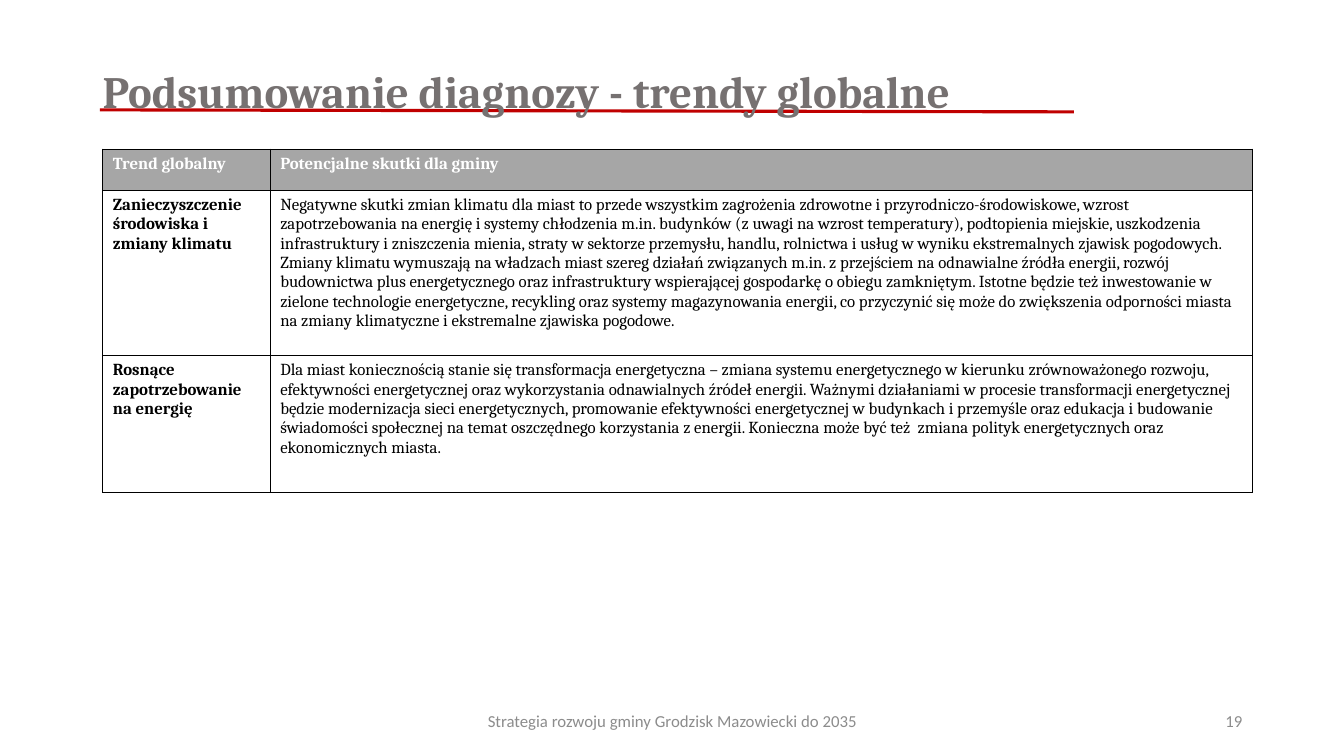
from lxml.etree import SubElement
from pptx import Presentation
from pptx.dml.color import RGBColor
from pptx.enum.shapes import MSO_CONNECTOR
from pptx.enum.text import MSO_ANCHOR, PP_ALIGN
from pptx.oxml import parse_xml
from pptx.oxml.ns import nsdecls, qn
from pptx.util import Inches, Pt

RED = RGBColor(0xC0, 0x00, 0x00)
GRAY = RGBColor(0x76, 0x71, 0x71)
PALE = RGBColor(0x8C, 0x8C, 0x8C)
HEAD = RGBColor(0xA6, 0xA6, 0xA6)
WHITE = RGBColor(0xFF, 0xFF, 0xFF)
BLACK = RGBColor(0x00, 0x00, 0x00)

COLS = [1.66, 9.74]
ROWS = [0.41, 1.64, 1.36]
# Each cell is a list of paragraphs
TEXTS = [
    [["Trend globalny"], ["Potencjalne skutki dla gminy"]],
    [
        ["Zanieczyszczenie środowiska i zmiany klimatu"],
        [
            "Negatywne skutki zmian klimatu dla miast to przede wszystkim zagrożenia zdrowotne i "
            "przyrodniczo-środowiskowe, wzrost zapotrzebowania na energię i systemy chłodzenia m.in. "
            "budynków (z uwagi na wzrost temperatury), podtopienia miejskie, uszkodzenia "
            "infrastruktury i zniszczenia mienia, straty w sektorze przemysłu, handlu, rolnictwa i "
            "usług w wyniku ekstremalnych zjawisk pogodowych.",
            "Zmiany klimatu wymuszają na władzach miast szereg działań związanych m.in. z przejściem "
            "na odnawialne źródła energii, rozwój budownictwa plus energetycznego oraz "
            "infrastruktury wspierającej gospodarkę o obiegu zamkniętym. Istotne będzie też "
            "inwestowanie w zielone technologie energetyczne, recykling oraz systemy magazynowania "
            "energii, co przyczynić się może do zwiększenia odporności miasta na zmiany klimatyczne "
            "i ekstremalne zjawiska pogodowe.",
        ],
    ],
    [
        ["Rosnące zapotrzebowanie na energię"],
        [
            "Dla miast koniecznością stanie się transformacja energetyczna – zmiana systemu "
            "energetycznego w kierunku zrównoważonego rozwoju, efektywności energetycznej oraz "
            "wykorzystania odnawialnych źródeł energii. Ważnymi działaniami w procesie transformacji "
            "energetycznej będzie modernizacja sieci energetycznych, promowanie efektywności "
            "energetycznej w budynkach i przemyśle oraz edukacja i budowanie świadomości społecznej "
            "na temat oszczędnego korzystania z energii. Konieczna może być też  zmiana polityk "
            "energetycznych oraz ekonomicznych miasta.",
        ],
    ],
]


def style(frame, face, size, color, bold=False):
    for para in frame.paragraphs:
        for run in para.runs:
            run.font.name = face
            run.font.size = Pt(size)
            run.font.bold = bold
            run.font.color.rgb = color


def label(text, left, top, width, height, align):
    box = slide.shapes.add_textbox(Inches(left), Inches(top), Inches(width), Inches(height))
    frame = box.text_frame
    frame.word_wrap = True
    frame.vertical_anchor = MSO_ANCHOR.MIDDLE
    frame.text = text
    frame.paragraphs[0].alignment = align
    return frame


deck = Presentation()
deck.slide_width, deck.slide_height = Inches(13.33), Inches(7.5)
slide = deck.slides.add_slide(deck.slide_layouts[6])

# Red rule under the title
rule = slide.shapes.add_connector(
    MSO_CONNECTOR.STRAIGHT, Inches(0.99), Inches(1.09), Inches(10.65), Inches(1.11))
rule.line.color.rgb = RED
rule.line.width = Pt(2.25)
SubElement(rule._element.spPr, qn("a:effectLst"))

# Title
title = label("Podsumowanie diagnozy - trendy globalne", 0.92, 0.28, 11.5, 1.04, PP_ALIGN.LEFT)
title.paragraphs[0].line_spacing = Pt(52.8)
style(title, "Cambria", 32, GRAY, True)

# Footer and page number
for text, left, width, align in [
    ("Strategia rozwoju gminy Grodzisk Mazowiecki do 2035", 4.42, 4.5, PP_ALIGN.CENTER),
    ("19", 9.42, 3, PP_ALIGN.RIGHT),
]:
    style(label(text, left, 6.95, width, 0.4, align), "Calibri", 12, PALE)

# Table of trends
table = slide.shapes.add_table(
    len(ROWS), len(COLS), Inches(1.02), Inches(1.48),
    Inches(sum(COLS)), Inches(sum(ROWS))).table
for col, width in zip(table.columns, COLS):
    col.width = Inches(width)
for row, height in zip(table.rows, ROWS):
    row.height = Inches(height)

for r, row in enumerate(TEXTS):
    for c, paras in enumerate(row):
        cell = table.cell(r, c)
        cell.text_frame.text = "\n".join(paras)
        style(cell.text_frame, "Cambria", 12, BLACK if r else WHITE, r == 0 or c == 0)
        if r:
            cell.fill.background()
        else:
            cell.fill.solid()
            cell.fill.fore_color.rgb = HEAD
        # Thin black borders, placed ahead of the fill
        for n, side in enumerate(["lnL", "lnR", "lnT", "lnB"]):
            edge = parse_xml(
                f'<a:{side} {nsdecls("a")} w="{Pt(1)}"><a:solidFill>'
                f'<a:srgbClr val="{BLACK}"/></a:solidFill></a:{side}>')
            cell._tc.get_or_add_tcPr().insert(n, edge)

deck.save("out.pptx")
